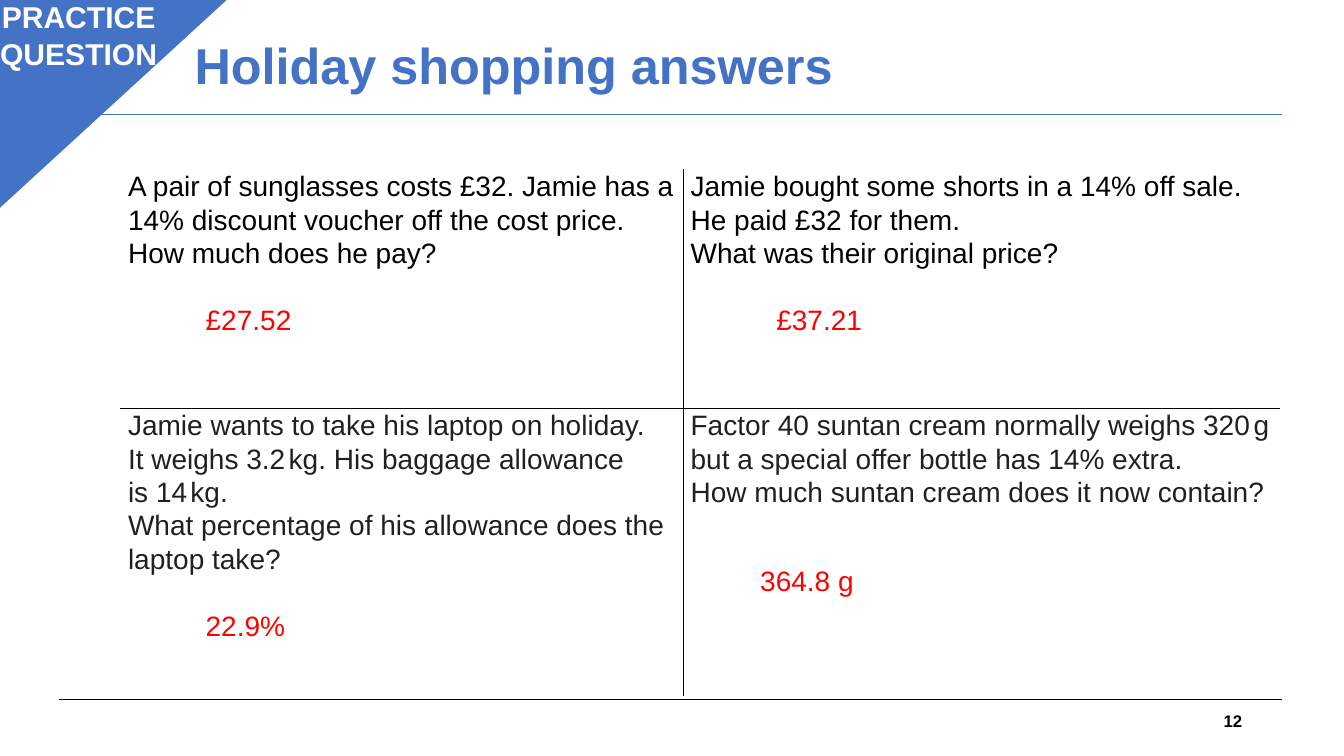
from lxml import etree
from pptx import Presentation
from pptx.dml.color import RGBColor
from pptx.enum.shapes import MSO_CONNECTOR, MSO_SHAPE
from pptx.enum.text import MSO_ANCHOR, PP_ALIGN
from pptx.oxml.ns import qn
from pptx.util import Inches, Pt

LINE = MSO_CONNECTOR.STRAIGHT
TRIANGLE = MSO_SHAPE.ISOSCELES_TRIANGLE
MIDDLE, TOP = MSO_ANCHOR.MIDDLE, MSO_ANCHOR.TOP
LEFT, CENTER, RIGHT = PP_ALIGN.LEFT, PP_ALIGN.CENTER, PP_ALIGN.RIGHT

COLORS = {"blue": "4472C4", "black": "000000", "ink": "231F20",
          "answer": "FF0000", "white": "FFFFFF"}
FONT = "Arial"
UNIT_GAP = "~"

TITLE = "Holiday shopping answers"
BADGE = "PRACTICE QUESTION"
PAGE = "12"
QUESTIONS = [
    [
        {"lines": ["A pair of sunglasses costs £32. Jamie has a 14% discount voucher off the cost price.",
                   "How much does he pay?"],
         "answer": "£27.52", "indent": 0.77, "gap": 24, "color": "black"},
        {"lines": ["Jamie bought some shorts in a 14% off sale. He paid £32 for them.",
                   "What was their original price?"],
         "answer": "£37.21", "indent": 0.85, "gap": 24, "color": "black"},
    ],
    [
        {"lines": ["Jamie wants to take his laptop on holiday.",
                   "It weighs 3.2~kg. His baggage allowance\nis 14~kg.",
                   "What percentage of his allowance does the laptop take?"],
         "answer": "22.9%", "indent": 0.77, "gap": 24, "color": "ink"},
        {"lines": ["Factor 40 suntan cream normally weighs 320~g but a special offer bottle has 14% extra.",
                   "How much suntan cream does it now contain?"],
         "answer": "364.8 g", "indent": 0.69, "gap": 40, "color": "ink"},
    ],
]
COLUMN_WIDTHS = [5.58, 5.91]
ROW_HEIGHTS = [2.37, 2.86]
RULES = [(6.94, "black"), (1.14, "blue")]


def rgb(name):
    return RGBColor.from_string(COLORS[name])


def style(run, size, color, bold=False):
    run.font.name = FONT
    run.font.size = Pt(size)
    run.font.bold = bold
    run.font.color.rgb = rgb(color)


def fill_text(frame, text, size, color, align, anchor):
    frame.text = text
    frame.word_wrap = True
    frame.vertical_anchor = anchor
    paragraph = frame.paragraphs[0]
    paragraph.alignment = align
    style(paragraph.runs[0], size, color, True)


def add_label(slide, box, text, size, color, align, anchor):
    label = slide.shapes.add_textbox(*map(Inches, box))
    fill_text(label.text_frame, text, size, color, align, anchor)


def add_rule(slide, y, color):
    rule = slide.shapes.add_connector(
        LINE, Inches(0.59), Inches(y), Inches(12.72), Inches(y))
    rule.line.color.rgb = rgb(color)
    rule.line.width = Pt(0.75)
    etree.SubElement(rule._element.spPr, qn("a:effectLst"))


def add_corner(slide):
    corner = slide.shapes.add_shape(
        TRIANGLE, *map(Inches, (-0.03, -0.02, 2.29, 2.1)))
    corner.adjustments[0] = 0
    corner._element.spPr.xfrm.set("flipV", "1")
    corner.shadow.inherit = False
    corner.fill.solid()
    corner.fill.fore_color.rgb = rgb("blue")
    corner.line.color.rgb = rgb("blue")
    corner.line.width = Pt(1)


def write_line(paragraph, line, color):
    for row, part in enumerate(line.split("\n")):
        if row:
            paragraph.add_line_break()
        for index, words in enumerate(part.split(UNIT_GAP)):
            if index:
                space = paragraph.add_run()
                space.text = " "
                style(space, 8, color)
            run = paragraph.add_run()
            run.text = words
            style(run, 20, color)


def write_question(cell, question):
    cell.margin_left = cell.margin_right = Inches(0.07)
    cell.margin_top = cell.margin_bottom = 0
    frame = cell.text_frame
    lines = question["lines"] + [question["answer"]]
    for index, line in enumerate(lines):
        paragraph = frame.add_paragraph() if index else frame.paragraphs[0]
        paragraph.line_spacing = 1.07
        is_answer = index == len(lines) - 1
        write_line(paragraph, line, "answer" if is_answer else question["color"])
        if is_answer:
            paragraph.space_before = Pt(question["gap"])
            properties = paragraph._p.get_or_add_pPr()
            properties.set("marL", str(Inches(question["indent"])))
            properties.set("indent", "0")


def draw_borders(cell, sides):
    properties = cell._tc.get_or_add_tcPr()
    for position, side in enumerate(sides):
        border = etree.Element(qn("a:ln" + side), w=str(Pt(1)))
        fill = etree.SubElement(border, qn("a:solidFill"))
        etree.SubElement(fill, qn("a:srgbClr"), val=COLORS["black"])
        properties.insert(position, border)


def add_questions(slide):
    table = slide.shapes.add_table(
        len(ROW_HEIGHTS), len(COLUMN_WIDTHS), Inches(1.2), Inches(1.68),
        Inches(sum(COLUMN_WIDTHS)), Inches(sum(ROW_HEIGHTS))).table
    table.first_row = table.horz_banding = False
    for column, width in zip(table.columns, COLUMN_WIDTHS):
        column.width = Inches(width)
    for row, height in zip(table.rows, ROW_HEIGHTS):
        row.height = Inches(height)
    for r, questions in enumerate(QUESTIONS):
        for c, question in enumerate(questions):
            cell = table.cell(r, c)
            cell.fill.background()
            write_question(cell, question)
            draw_borders(cell, "RL"[c] + "BT"[r])


def main():
    deck = Presentation()
    deck.slide_width, deck.slide_height = Inches(13.33), Inches(7.5)
    slide = deck.slides.add_slide(deck.slide_layouts[5])
    for y, color in RULES:
        add_rule(slide, y, color)
    title = slide.shapes.title
    title.left, title.top, title.width, title.height = map(
        Inches, (1.83, 0.12, 10, 1.11))
    fill_text(title.text_frame, TITLE, 36, "blue", LEFT, MIDDLE)
    title.text_frame.paragraphs[0].line_spacing = 0.9
    add_label(slide, (9.42, 6.95, 3, 0.4), PAGE, 12, "black", RIGHT, MIDDLE)
    add_corner(slide)
    add_label(slide, (-0.28, -0.06, 2.12, 0.84), BADGE, 21.5, "white", CENTER, TOP)
    add_questions(slide)
    deck.save("out.pptx")


if __name__ == "__main__":
    main()
